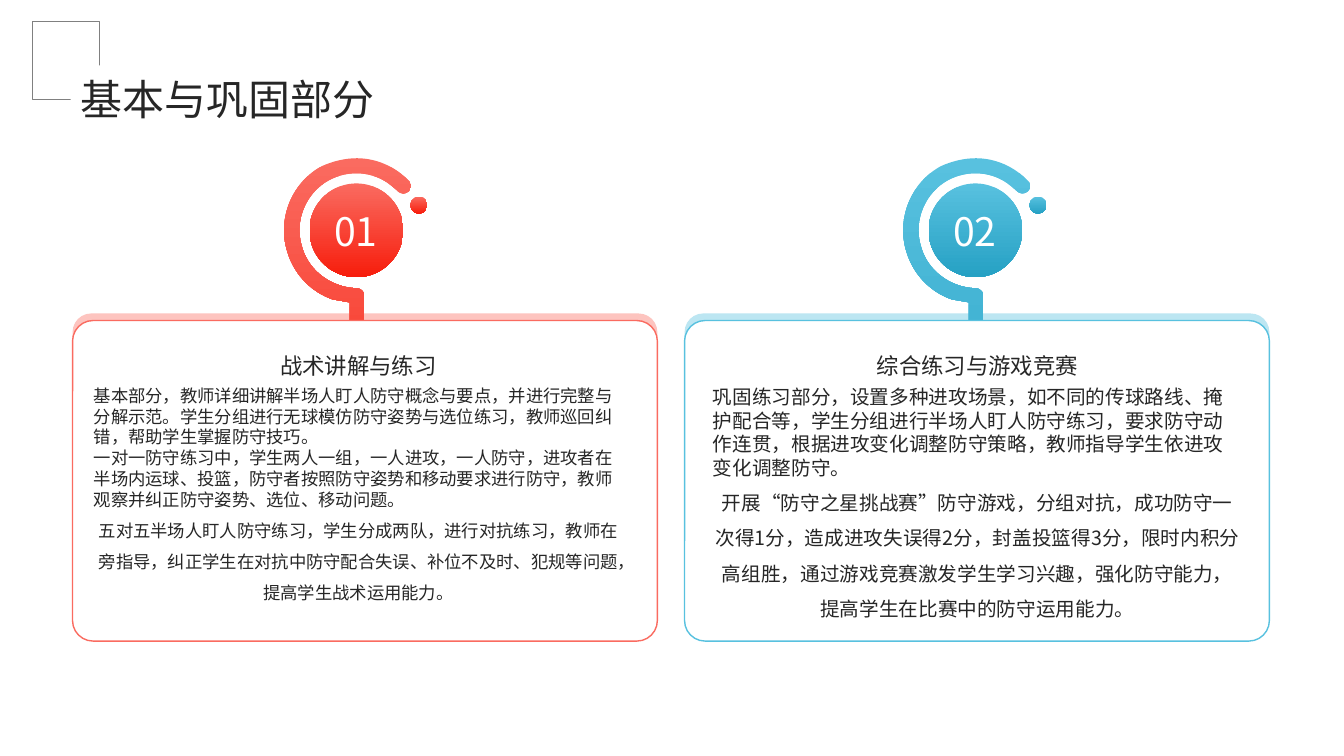
import lxml.etree
import pptx
import pptx.dml.color
import pptx.enum.shapes
import pptx.enum.text
import pptx.oxml.ns
import pptx.util

Inches = pptx.util.Inches
Pt = pptx.util.Pt
RGBColor = pptx.dml.color.RGBColor
ShapeType = pptx.enum.shapes.MSO_SHAPE
Align = pptx.enum.text.PP_ALIGN
Anchor = pptx.enum.text.MSO_ANCHOR
qn = pptx.oxml.ns.qn

FONT = "Noto Sans CJK SC"
INK = RGBColor(0x26, 0x26, 0x26)
WHITE = RGBColor(0xFF, 0xFF, 0xFF)
GRAY = RGBColor(0x80, 0x80, 0x80)
RED = RGBColor(0xFA, 0x6B, 0x60)
DEEP_RED = RGBColor(0xF7, 0x1D, 0x0C)
PALE_RED = RGBColor(0xFD, 0xC4, 0xBF)
BLUE = RGBColor(0x58, 0xC1, 0xDF)
DEEP_BLUE = RGBColor(0x26, 0xA1, 0xC4)
PALE_BLUE = RGBColor(0xBC, 0xE6, 0xF2)

TITLE = "基本与巩固部分"
CARDS = [
    {
        "number": "01",
        "heading": "战术讲解与练习",
        "body": [
            "基本部分，教师详细讲解半场人盯人防守概念与要点，并进行完整与分解示范。学生分组进行无球模仿防守姿势与选位练习，教师巡回纠错，帮助学生掌握防守技巧。",
            "一对一防守练习中，学生两人一组，一人进攻，一人防守，进攻者在半场内运球、投篮，防守者按照防守姿势和移动要求进行防守，教师观察并纠正防守姿势、选位、移动问题。",
            "五对五半场人盯人防守练习，学生分成两队，进行对抗练习，教师在旁指导，纠正学生在对抗中防守配合失误、补位不及时、犯规等问题，提高学生战术运用能力。",
        ],
        "size": 12.4,
        "colors": (RED, DEEP_RED, PALE_RED),
    },
    {
        "number": "02",
        "heading": "综合练习与游戏竞赛",
        "body": [
            "巩固练习部分，设置多种进攻场景，如不同的传球路线、掩护配合等，学生分组进行半场人盯人防守练习，要求防守动作连贯，根据进攻变化调整防守策略，教师指导学生依进攻变化调整防守。",
            "开展“防守之星挑战赛”防守游戏，分组对抗，成功防守一次得1分，造成进攻失误得2分，封盖投篮得3分，限时内积分高组胜，通过游戏竞赛激发学生学习兴趣，强化防守能力，提高学生在比赛中的防守运用能力。",
        ],
        "size": 14,
        "colors": (BLUE, DEEP_BLUE, PALE_BLUE),
    },
]
CARD_STEP = 6.07
BADGE_STEP = 6.14

RING_BOX = (2.81, 1.57, 1.26, 3.64)
RING_START = (3.54, 1.57)
RING_SEGMENTS = [
    [(3.73, 1.57), (3.92, 1.65), (4.06, 1.8)],
    [(4.07, 1.81)],
    [(4.08, 1.82), (4.08, 1.83), (4.08, 1.84)],
    [(4.08, 1.89), (4.04, 1.92), (4, 1.92)],
    [(3.98, 1.92), (3.96, 1.91), (3.95, 1.9)],
    [(3.94, 1.89)],
    [(3.88, 1.84)],
    [(3.71, 1.7), (3.46, 1.68), (3.26, 1.79)],
    [(3.04, 1.91), (2.92, 2.18), (2.99, 2.43)],
    [(3.05, 2.68), (3.28, 2.85), (3.53, 2.86)],
    [(3.54, 2.86)],
    [(3.57, 2.86), (3.61, 2.89), (3.61, 2.92)],
    [(3.61, 3.66), (3.61, 4.4), (3.61, 5.13)],
    [(3.61, 5.17), (3.57, 5.2), (3.54, 5.2)],
    [(3.5, 5.2), (3.47, 5.17), (3.47, 5.13)],
    [(3.47, 3)],
    [(3.3, 2.97)],
    [(3.07, 2.89), (2.9, 2.7), (2.84, 2.46)],
    [(2.76, 2.15), (2.9, 1.81), (3.19, 1.65)],
    [(3.3, 1.6), (3.42, 1.57), (3.54, 1.57)],
]


def paint(shape, fill=None, line=None, width=1):
    shape.shadow.inherit = False
    if fill is None:
        shape.fill.background()
    elif isinstance(fill, RGBColor):
        shape.fill.solid()
        shape.fill.fore_color.rgb = fill
    else:
        shape.fill.gradient()
        shape.fill.gradient_angle = 270
        for stop, color, position in zip(shape.fill.gradient_stops, fill, (0, 1)):
            stop.color.rgb = color
            stop.position = position
    if line is None:
        shape.line.fill.background()
    else:
        shape.line.color.rgb = line
        shape.line.width = Pt(width)


def add_shape(slide, kind, box, **style):
    shape = slide.shapes.add_shape(kind, *map(Inches, box))
    paint(shape, **style)
    if kind == ShapeType.ROUNDED_RECTANGLE:
        shape.adjustments[0] = 0.064


def add_ring(slide, shift, gradient):
    left, top, width, height = RING_BOX
    right, bottom = left + width, top + height
    corners = [(left, top), (right, top), (right, bottom), (left, bottom)]
    points = [(Inches(x + shift), Inches(y)) for x, y in corners]
    builder = slide.shapes.build_freeform(*points[0])
    builder.add_line_segments(points[1:], close=True)
    shape = builder.convert_to_shape()
    outline = next(shape.element.iter(qn("a:pathLst")))[0]
    for command in list(outline):
        outline.remove(command)
    commands = [("a:moveTo", [RING_START])]
    for segment in RING_SEGMENTS:
        commands.append(("a:lnTo" if len(segment) == 1 else "a:cubicBezTo", segment))
    for tag, segment in commands + [("a:close", [])]:
        command = lxml.etree.SubElement(outline, qn(tag))
        for x, y in segment:
            point = lxml.etree.SubElement(command, qn("a:pt"))
            point.set("x", str(int(Inches(x - left))))
            point.set("y", str(int(Inches(y - top))))
    paint(shape, fill=gradient)


def add_text(slide, box, text, size, color=INK, align=Align.CENTER, anchor=Anchor.TOP, spacing=None):
    frame = slide.shapes.add_textbox(*map(Inches, box)).text_frame
    frame.margin_left = frame.margin_right = frame.margin_top = frame.margin_bottom = 0
    frame.word_wrap = True
    frame.vertical_anchor = anchor
    paragraph = frame.paragraphs[0]
    paragraph.alignment = align
    paragraph.line_spacing = spacing
    run = paragraph.add_run()
    run.text = text
    run.font.name = FONT
    run.font.size = Pt(size)
    run.font.color.rgb = color


def add_card(slide, index, card):
    main_color, deep, pale = card["colors"]
    left = 0.72 + index * CARD_STEP
    shift = index * BADGE_STEP
    add_shape(slide, ShapeType.ROUNDED_RECTANGLE, (left, 3.11, 5.8, 2.89), fill=pale)
    add_ring(slide, shift, (main_color, deep))
    for x, y, diameter in ((3.07, 1.82, 0.93), (4.07, 1.95, 0.17)):
        add_shape(slide, ShapeType.OVAL, (x + shift, y, diameter, diameter), fill=(main_color, deep))
    add_shape(slide, ShapeType.ROUNDED_RECTANGLE, (left, 3.18, 5.8, 3.18), fill=WHITE, line=main_color)
    add_text(slide, (0.93 + shift, 3.37, 5.25, 0.39), card["heading"], 16, anchor=Anchor.BOTTOM)
    add_text(slide, (0.93 + shift, 3.82, 5.25, 2.4), "\n".join(card["body"]), card["size"], spacing=1.5)
    add_text(slide, (3.09 + shift, 1.98, 0.88, 0.63), card["number"], 28, WHITE, anchor=Anchor.MIDDLE)


def main():
    presentation = pptx.Presentation()
    presentation.slide_width = Inches(13.33)
    presentation.slide_height = Inches(7.5)
    slide = presentation.slides.add_slide(presentation.slide_layouts[6])
    for index, card in enumerate(CARDS):
        add_card(slide, index, card)
    add_shape(slide, ShapeType.RECTANGLE, (0.32, 0.21, 0.67, 0.78), line=GRAY, width=0.75)
    add_shape(slide, ShapeType.RECTANGLE, (0.7, 0.65, 0.61, 0.5), fill=WHITE)
    add_text(slide, (0.8, 0.68, 11.1, 0.46), TITLE, 30, align=Align.LEFT, spacing=1.1)
    presentation.save("out.pptx")


if __name__ == "__main__":
    main()
